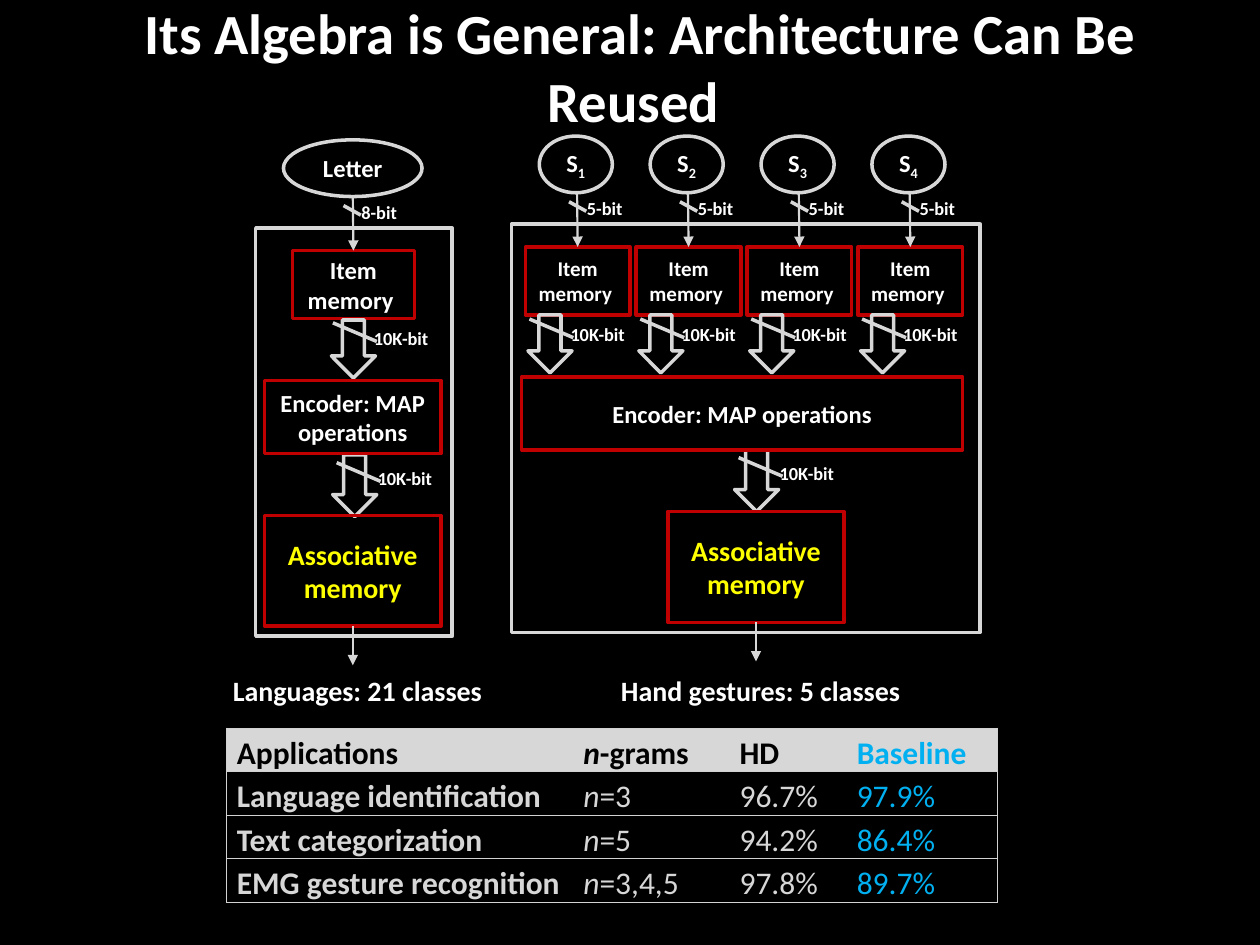
from dataclasses import dataclass

from lxml import etree
from pptx import Presentation
from pptx.dml.color import RGBColor
from pptx.enum.shapes import MSO_CONNECTOR, MSO_SHAPE
from pptx.enum.text import MSO_ANCHOR, PP_ALIGN
from pptx.oxml.ns import qn
from pptx.util import Emu, Pt

PX = 9144  # 100 px to the inch
BLACK = RGBColor(0x00, 0x00, 0x00)
WHITE = RGBColor(0xFF, 0xFF, 0xFF)
GREY = RGBColor(0xD7, 0xD7, 0xD7)
BORDER_GREY = RGBColor(0xD2, 0xD2, 0xD2)
RED = RGBColor(0xC0, 0x00, 0x00)
YELLOW = RGBColor(0xFF, 0xFF, 0x00)
BLUE = RGBColor(0x00, 0xB0, 0xF0)
FONT = "Calibri"

RECTANGLE = MSO_SHAPE.RECTANGLE
ELLIPSE = MSO_SHAPE.OVAL
DOWN_ARROW = MSO_SHAPE.DOWN_ARROW
CALLOUT = MSO_SHAPE.LINE_CALLOUT_1_NO_BORDER
STRAIGHT = MSO_CONNECTOR.STRAIGHT
LEFT, CENTER = PP_ALIGN.LEFT, PP_ALIGN.CENTER
TOP, MIDDLE = MSO_ANCHOR.TOP, MSO_ANCHOR.MIDDLE
TOP_SIDE, BOTTOM_SIDE = 0, 2
INPUT_SLASH = (0.615, 0.161, 0.219, -0.076)
VECTOR_SLASH = (0.632, 0.144, -0.147, -0.271)


@dataclass(frozen=True)
class Span:
    text: str
    italic: bool = False
    subscript: bool = False


@dataclass(frozen=True)
class Area:
    left: int
    top: int
    width: int
    height: int


@dataclass(frozen=True)
class Channel:
    """One input: its symbol, the item memory below it and the labels."""
    name: list
    symbol: Area
    memory: Area
    bits: str
    bits_left: int
    memory_size: int


@dataclass(frozen=True)
class Flow:
    """A block arrow and the offset of its 10K-bit label."""
    left: int
    top: int
    height: int
    label_x: int
    label_y: int


@dataclass(frozen=True)
class Pipeline:
    frame: Area
    channels: list
    flows: list
    encoder: Area
    associative: Area
    caption: str
    caption_area: Area


def px(length: int) -> Emu:
    return Emu(length * PX)


def bounds(area: Area) -> list:
    return [px(n) for n in (area.left, area.top, area.width, area.height)]


def write(frame, spans, size=14, color=WHITE, bold=True, align=CENTER, anchor=MIDDLE):
    frame.word_wrap = True
    frame.vertical_anchor = anchor
    para = frame.paragraphs[0]
    para.alignment = align
    for span in [Span(spans)] if isinstance(spans, str) else spans:
        run = para.add_run()
        run.text = span.text
        font = run.font
        font.name, font.size, font.bold = FONT, Pt(size), bold
        font.italic = span.italic
        font.color.rgb = color
        if span.subscript:
            font._element.set("baseline", "-25000")
    return para


def add_outline(slide, kind, area: Area, color: RGBColor = GREY):
    shape = slide.shapes.add_shape(kind, *bounds(area))
    shape.shadow.inherit = False
    shape.fill.background()
    shape.line.color.rgb = color
    shape.line.width = Pt(2)
    return shape


def add_box(slide, area: Area, text: str, **text_format):
    box = add_outline(slide, RECTANGLE, area, RED)
    write(box.text_frame, text, **text_format)
    return box


def add_label(slide, area: Area, text: str, slash: tuple) -> None:
    """Bit width with a slash across the wire it describes."""
    label = add_outline(slide, CALLOUT, area)
    for index, value in enumerate(slash):
        label.adjustments[index] = value
    write(label.text_frame, text, size=10.5, align=LEFT)


def add_arrow(slide, x: int, top: int, bottom: int):
    arrow = slide.shapes.add_connector(STRAIGHT, px(x), px(top), px(x), px(bottom))
    arrow.line.color.rgb = GREY
    arrow.line.width = Pt(1.25)
    etree.SubElement(arrow.line._get_or_add_ln(), qn("a:tailEnd"), type="triangle")
    etree.SubElement(arrow._element.spPr, qn("a:effectLst"))
    return arrow


def add_channel(slide, channel: Channel) -> None:
    symbol, memory = channel.symbol, channel.memory
    ellipse = add_outline(slide, ELLIPSE, symbol)
    write(ellipse.text_frame, channel.name)
    box = add_box(slide, memory, "Item memory ", size=channel.memory_size)
    wire_top = symbol.top + symbol.height
    wire = add_arrow(slide, memory.left + memory.width // 2, wire_top, memory.top)
    wire.end_connect(box, TOP_SIDE)
    label_area = Area(channel.bits_left, wire_top + 3, 58, 19)
    add_label(slide, label_area, channel.bits, INPUT_SLASH)


def add_flow(slide, flow: Flow) -> None:
    add_outline(slide, DOWN_ARROW, Area(flow.left, flow.top, 35, flow.height))
    label_area = Area(flow.left + flow.label_x, flow.top + flow.label_y, 84, 19)
    add_label(slide, label_area, "10K-bit", VECTOR_SLASH)


def add_pipeline(slide, pipeline: Pipeline) -> None:
    add_outline(slide, RECTANGLE, pipeline.frame)
    for channel in pipeline.channels:
        add_channel(slide, channel)
    for flow in pipeline.flows:
        add_flow(slide, flow)
    add_box(slide, pipeline.encoder, "Encoder: MAP operations")
    area = pipeline.associative
    memory = add_box(slide, area, "Associative memory", size=16, color=YELLOW)
    bottom = area.top + area.height
    output = add_arrow(slide, area.left + area.width // 2, bottom, bottom + 31)
    output.begin_connect(memory, BOTTOM_SIDE)
    caption = slide.shapes.add_textbox(*bounds(pipeline.caption_area))
    write(caption.text_frame, pipeline.caption, size=16, align=LEFT, anchor=TOP)


def set_borders(cell, sides: dict) -> None:
    properties = cell._tc.get_or_add_tcPr()
    for side, visible in sides.items():
        line = etree.SubElement(properties, qn(f"a:ln{side}"), w=str(Pt(0.75)))
        fill = etree.SubElement(line, qn("a:solidFill" if visible else "a:noFill"))
        if visible:
            etree.SubElement(fill, qn("a:srgbClr"), val=str(BORDER_GREY))


def add_results(slide, rows: list) -> None:
    widths = [275, 124, 93, 120]
    area = Area(180, 578, sum(widths), 138)
    table = slide.shapes.add_table(len(rows), len(widths), *bounds(area)).table
    table.horz_banding = False
    for column, width in zip(table.columns, widths):
        column.width = px(width)
    last = len(widths) - 1
    for r, row in enumerate(rows):
        for c, content in enumerate(row):
            cell = table.cell(r, c)
            set_borders(cell, {"L": c == 0, "R": c == last, "T": True, "B": True})
            cell.margin_left = cell.margin_right = px(8)
            cell.margin_top = cell.margin_bottom = 0
            if r == 0:
                cell.fill.solid()
                cell.fill.fore_color.rgb = GREY
            else:
                cell.fill.background()
            color = BLUE if c == last else BLACK if r == 0 else GREY
            para = write(cell.text_frame, content, size=18, color=color,
                         bold=r == 0 or c == 0, align=LEFT, anchor=TOP)
            para.line_spacing = 1.15
            para.space_after = Pt(5)


def main() -> None:
    deck = Presentation()
    deck.slide_width, deck.slide_height = px(1000), px(750)
    slide = deck.slides.add_slide(deck.slide_layouts[6])
    slide.background.fill.solid()
    slide.background.fill.fore_color.rgb = BLACK

    title = slide.shapes.add_textbox(*bounds(Area(33, 17, 950, 70)))
    title.text_frame.margin_left = title.text_frame.margin_right = px(15)
    write(title.text_frame, "Its Algebra is General: Architecture Can Be Reused ", size=32.4)

    lefts = [417 + 88 * i for i in range(4)]
    sensors = [Channel([Span("S"), Span(str(i), subscript=True)], Area(x + 11, 108, 58, 45),
                       Area(x, 196, 83, 54), "5-bit", x + 39, 12)
               for i, x in enumerate(lefts, 1)]
    letter = Channel([Span("Letter")], Area(225, 111, 110, 45),
                     Area(232, 199, 97, 54), "8-bit", 277, 14)
    add_pipeline(slide, Pipeline(
        Area(406, 178, 372, 324), sensors,
        [Flow(x + 2, 250, 46, 24, 6) for x in lefts] + [Flow(583, 357, 49, 26, 9)],
        Area(414, 299, 350, 58), Area(530, 406, 140, 88),
        "Hand gestures: 5 classes", Area(483, 530, 245, 37)))
    add_pipeline(slide, Pipeline(
        Area(203, 181, 156, 324), [letter],
        [Flow(263, 254, 46, 24, 5), Flow(264, 361, 49, 26, 9)],
        Area(210, 302, 140, 58), Area(210, 409, 140, 88),
        "Languages: 21 classes", Area(175, 530, 220, 37)))

    n = Span("n", italic=True)
    add_results(slide, [
        ["Applications", [n, Span("-grams")], "HD", "Baseline"],
        ["Language identification", [n, Span("=3")], "96.7%", "97.9%"],
        ["Text categorization", [n, Span("=5")], "94.2%", "86.4%"],
        ["EMG gesture recognition", [n, Span("=3,4,5")], "97.8%", "89.7%"],
    ])
    deck.save("out.pptx")


if __name__ == "__main__":
    main()
